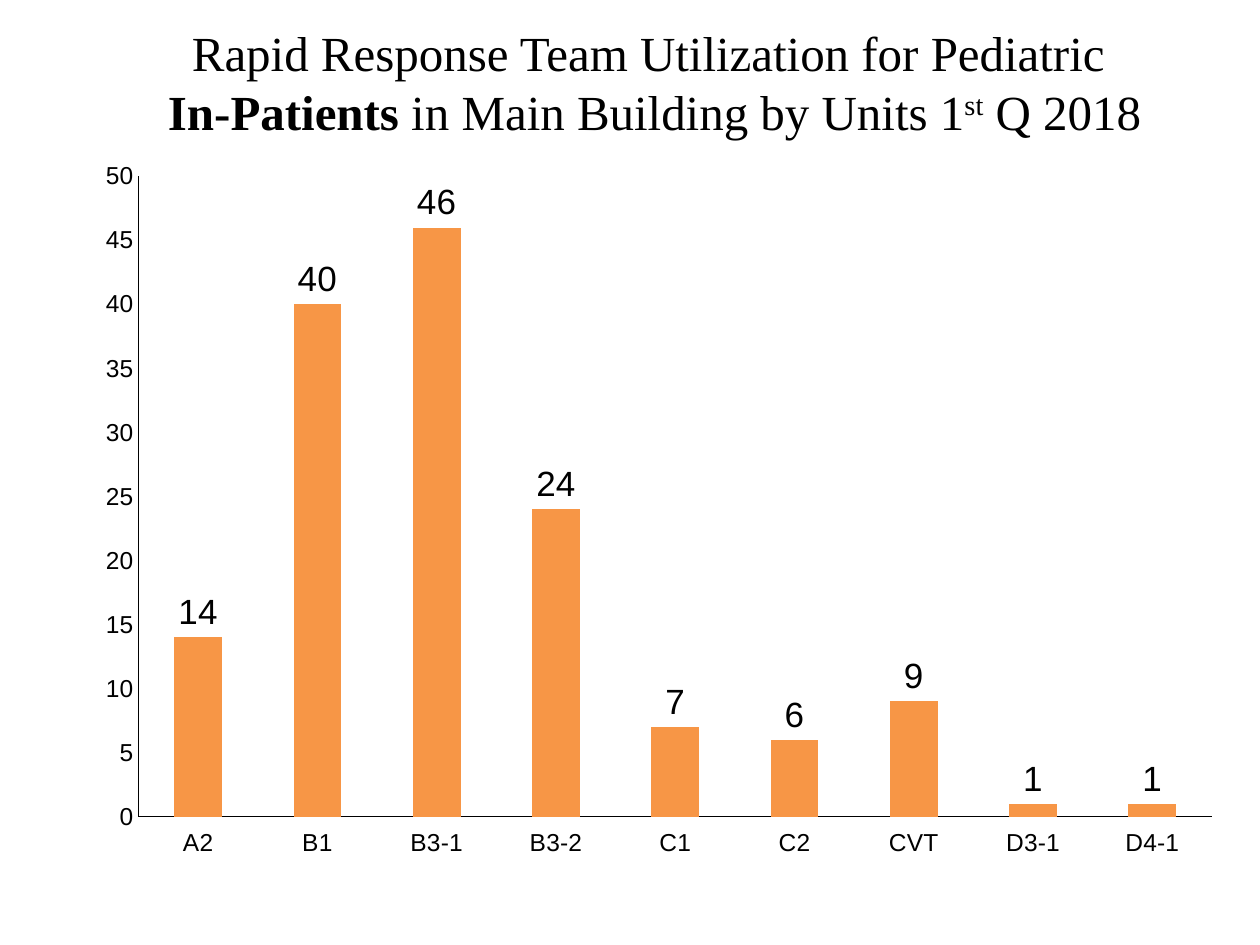
from lxml import etree
from pptx import Presentation
from pptx.chart.data import CategoryChartData
from pptx.dml.color import RGBColor
from pptx.enum.chart import XL_CHART_TYPE, XL_LABEL_POSITION, XL_TICK_LABEL_POSITION, XL_TICK_MARK
from pptx.enum.text import MSO_ANCHOR, MSO_AUTO_SIZE, PP_ALIGN
from pptx.oxml.ns import qn
from pptx.util import Pt

COLUMNS = XL_CHART_TYPE.COLUMN_CLUSTERED
OUTSIDE_END = XL_LABEL_POSITION.OUTSIDE_END
LOW = XL_TICK_LABEL_POSITION.LOW
NO_TICK = XL_TICK_MARK.NONE
CENTER = PP_ALIGN.CENTER

# Content: title lines as (text, style) runs, then calls per unit
TITLE = [
    [("Rapid Response Team Utilization for Pediatric ", "")],
    [("In-Patients", "bold"), (" in Main Building by Units 1", ""),
     ("st", "super"), (" Q 2018", "")],
]
CALLS = {"A2": 14, "B1": 40, "B3-1": 46, "B3-2": 24, "C1": 7,
         "C2": 6, "CVT": 9, "D3-1": 1, "D4-1": 1}
BLACK, ORANGE = "000000", "F79646"

# Boxes in points: left, top, width, height
TITLE_BOX = (76.3, 9.4, 595.4, 74.9)
CHART_BOX = (14.4, 84.2, 691.9, 446.4)
PLOT_BOX = (79.2, 100.8, 613.4, 366)


def color(hex_value):
    return RGBColor.from_string(hex_value)


def set_font(font, name, size):
    font.name, font.size = name, Pt(size)
    font.color.rgb = color(BLACK)


def place_plot(chart, plot_box, chart_box):
    """Fix the inner plot area as fractions of the chart frame."""
    area = chart._chartSpace.chart.plotArea
    for old in area.findall(qn("c:layout")):
        area.remove(old)
    layout = etree.Element(qn("c:layout"))
    manual = etree.SubElement(layout, qn("c:manualLayout"))
    left, top, width, height = chart_box
    x, y, w, h = plot_box
    values = {"layoutTarget": "inner", "xMode": "edge", "yMode": "edge",
              "x": (x - left) / width, "y": (y - top) / height,
              "w": w / width, "h": h / height}
    for tag, value in values.items():
        etree.SubElement(manual, qn("c:" + tag)).set("val", str(value))
    area.insert(0, layout)


prs = Presentation()
prs.slide_width, prs.slide_height = Pt(720), Pt(540)
s = prs.slides.add_slide(prs.slide_layouts[5])

# Title
title = s.shapes.title
title.left, title.top, title.width, title.height = map(Pt, TITLE_BOX)
tf = title.text_frame
tf.word_wrap = True
tf.auto_size = MSO_AUTO_SIZE.NONE
tf.vertical_anchor = MSO_ANCHOR.TOP
for i, line in enumerate(TITLE):
    p = tf.add_paragraph() if i else tf.paragraphs[0]
    p.alignment = CENTER
    set_font(p.font, "Times New Roman", 28)
    for text, style in line:
        r = p.add_run()
        r.text = text
        if style == "bold":
            r.font.bold = True
        elif style == "super":
            r._r.get_or_add_rPr().set("baseline", "30000")

# Chart
data = CategoryChartData(number_format="#0")
data.categories = list(CALLS)
data.add_series("Series 1", list(CALLS.values()))
chart = s.shapes.add_chart(COLUMNS, *map(Pt, CHART_BOX), data).chart
set_font(chart.font, "Calibri", 10)
chart.has_legend = False
chart.has_title = False
place_plot(chart, PLOT_BOX, CHART_BOX)

# Axes
for axis in (chart.category_axis, chart.value_axis):
    axis.has_major_gridlines = False
    axis.major_tick_mark = axis.minor_tick_mark = NO_TICK
    set_font(axis.tick_labels.font, "Arial", 14)
    axis.format.line.color.rgb = color(BLACK)
    axis.format.line.width = Pt(0)
chart.category_axis.tick_label_position = LOW
values = chart.value_axis
values.minimum_scale, values.maximum_scale, values.major_unit = 0, 50, 5
values.tick_labels.number_format = "#0"
values.tick_labels.number_format_is_linked = False

# Columns and their labels
plot = chart.plots[0]
plot.gap_width = 150
plot.vary_by_categories = False
series = plot.series[0]
series.format.fill.solid()
series.format.fill.fore_color.rgb = color(ORANGE)
labels = series.data_labels
labels.show_value = True
labels.position = OUTSIDE_END
labels.number_format = "#0"
labels.number_format_is_linked = False
set_font(labels.font, "Arial", 20)

prs.save("out.pptx")
